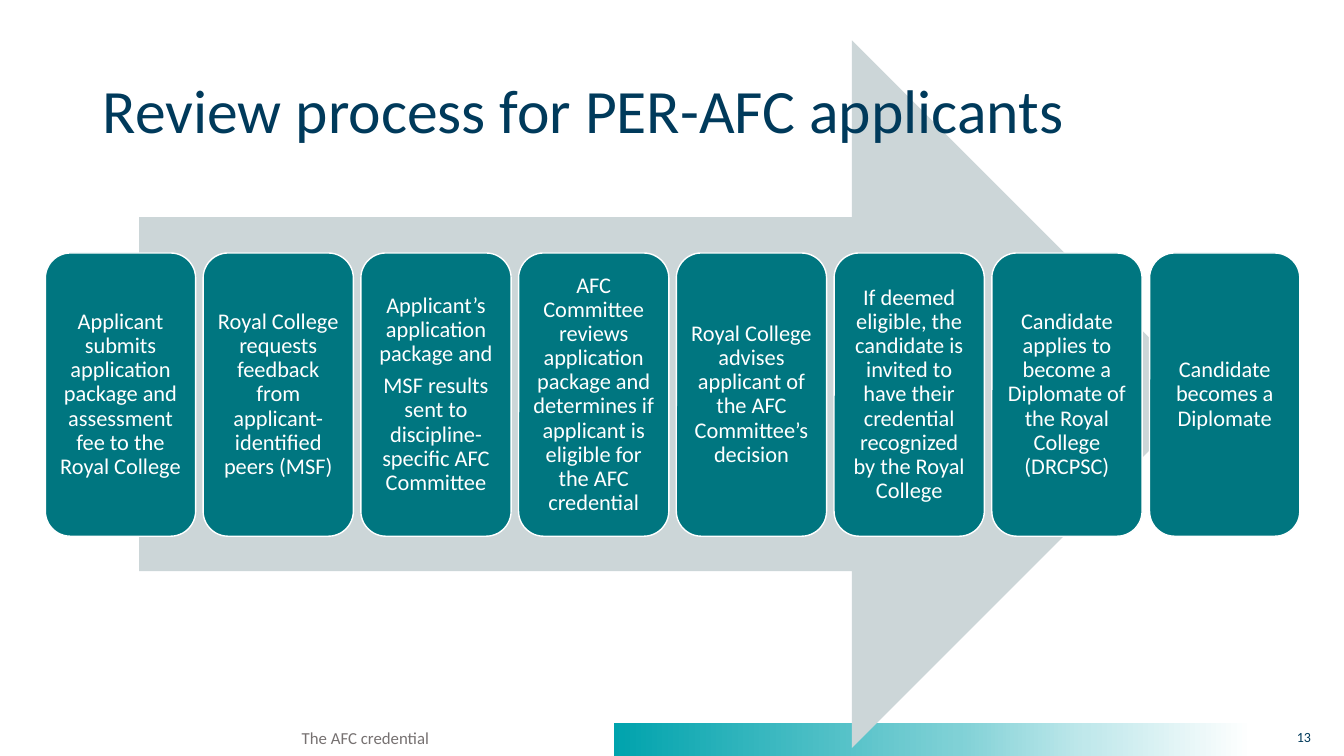
from pptx import Presentation
from pptx.dml.color import RGBColor
from pptx.enum.shapes import MSO_SHAPE as Shape
from pptx.enum.text import MSO_ANCHOR as Anchor, PP_ALIGN as Align
from pptx.oxml import parse_xml
from pptx.oxml.ns import nsdecls
from pptx.util import Inches, Pt

NAVY = RGBColor(0x00, 0x3A, 0x5B)
TEAL = RGBColor(0x00, 0x76, 0x80)
ARROW_GREY = RGBColor(0xCC, 0xD6, 0xD8)
FOOTER_GREY = RGBColor(0x76, 0x71, 0x71)
WHITE = RGBColor(0xFF, 0xFF, 0xFF)
BAR_STOPS = [
    (0, RGBColor(0x00, 0xA3, 0xAD)),
    (54, RGBColor(0x80, 0xD1, 0xD6)),
    (74, RGBColor(0xC0, 0xE8, 0xEB)),
    (100, WHITE),
]
FONT = "Calibri"

# Card row: the gap is a twentieth of a card's width
CARD_LEFT, CARD_TOP = 0.45, 2.51
CARD_WIDTH, CARD_HEIGHT = 1.49, 2.81
CARD_PITCH = CARD_WIDTH * 1.05
CARD_INSET = 0.07
FOOTER_TOP, FOOTER_HEIGHT = 7.14, 0.35

STEPS = [
    "Applicant submits application package and assessment fee to the Royal College",
    "Royal College requests feedback from applicant-identified peers (MSF)",
    "Applicant’s application package and\n"
    "MSF results sent to discipline-specific AFC Committee",
    "AFC Committee reviews application package and determines if applicant "
    "is eligible for the AFC credential",
    "Royal College advises applicant of the AFC Committee’s decision",
    "If deemed eligible, the candidate is invited to have their credential "
    "recognized by the Royal College",
    "Candidate applies to become a Diplomate of the Royal College (DRCPSC)",
    "Candidate becomes a Diplomate",
]


def write_text(shape, text, size, color, align, line_spacing=1.0, space_after=0):
    frame = shape.text_frame
    frame.text = text
    frame.word_wrap = True
    frame.vertical_anchor = Anchor.MIDDLE
    for paragraph in frame.paragraphs:
        paragraph.alignment = align
        paragraph.line_spacing = line_spacing
        paragraph.space_after = Pt(space_after)
        for run in paragraph.runs:
            run.font.name = FONT
            run.font.size = Pt(size)
            run.font.color.rgb = color


def add_label(slide, box, text, size, color, align, line_spacing=1.0):
    label = slide.shapes.add_textbox(*map(Inches, box))
    write_text(label, text, size, color, align, line_spacing)


def add_block(slide, kind, box, fill):
    block = slide.shapes.add_shape(kind, *map(Inches, box))
    block.shadow.inherit = False
    block.fill.solid()
    block.fill.fore_color.rgb = fill
    block.line.fill.background()
    return block


def add_gradient_bar(slide, box, stops):
    bar = add_block(slide, Shape.RECTANGLE, box, WHITE)
    bar.fill.gradient()
    bar.fill.gradient_angle = 0
    stop_list = bar.fill._fill._gradFill.gsLst
    for stop in list(stop_list):
        stop_list.remove(stop)
    for percent, color in stops:
        stop_list.append(parse_xml(
            f'<a:gs {nsdecls("a")} pos="{percent * 1000}">'
            f'<a:srgbClr val="{color}"/></a:gs>'))


def add_step_card(slide, column, text):
    left = CARD_LEFT + column * CARD_PITCH
    card = add_block(slide, Shape.ROUNDED_RECTANGLE,
                     (left, CARD_TOP, CARD_WIDTH, CARD_HEIGHT), TEAL)
    card.line.color.rgb = WHITE
    card.line.width = Pt(1)
    frame = card.text_frame
    frame.margin_left = frame.margin_right = Inches(CARD_INSET)
    frame.margin_top = frame.margin_bottom = Inches(CARD_INSET)
    write_text(card, text, 16, WHITE, Align.CENTER, 0.9, 5.6)


def main():
    presentation = Presentation()
    presentation.slide_width = Inches(13.33)
    presentation.slide_height = Inches(7.5)
    slide = presentation.slides.add_slide(presentation.slide_layouts[6])

    # Footer
    add_gradient_bar(slide, (6.09, 7.17, 6.33, 0.33), BAR_STOPS)
    add_label(slide, (1.41, FOOTER_TOP, 4.43, FOOTER_HEIGHT),
              "The AFC credential", 12, FOOTER_GREY, Align.CENTER)
    add_label(slide, (12.42, FOOTER_TOP, 0.68, FOOTER_HEIGHT),
              "13", 10, NAVY, Align.RIGHT)

    # Process arrow and its steps
    add_block(slide, Shape.RIGHT_ARROW, (1.38, 0.4, 10.58, 7.02), ARROW_GREY)
    for column, step in enumerate(STEPS):
        add_step_card(slide, column, step)

    # Title
    add_label(slide, (0.92, 0.4, 11.82, 1.45),
              "Review process for PER-AFC applicants", 44, NAVY, Align.LEFT, 0.9)

    presentation.save("out.pptx")


if __name__ == "__main__":
    main()
